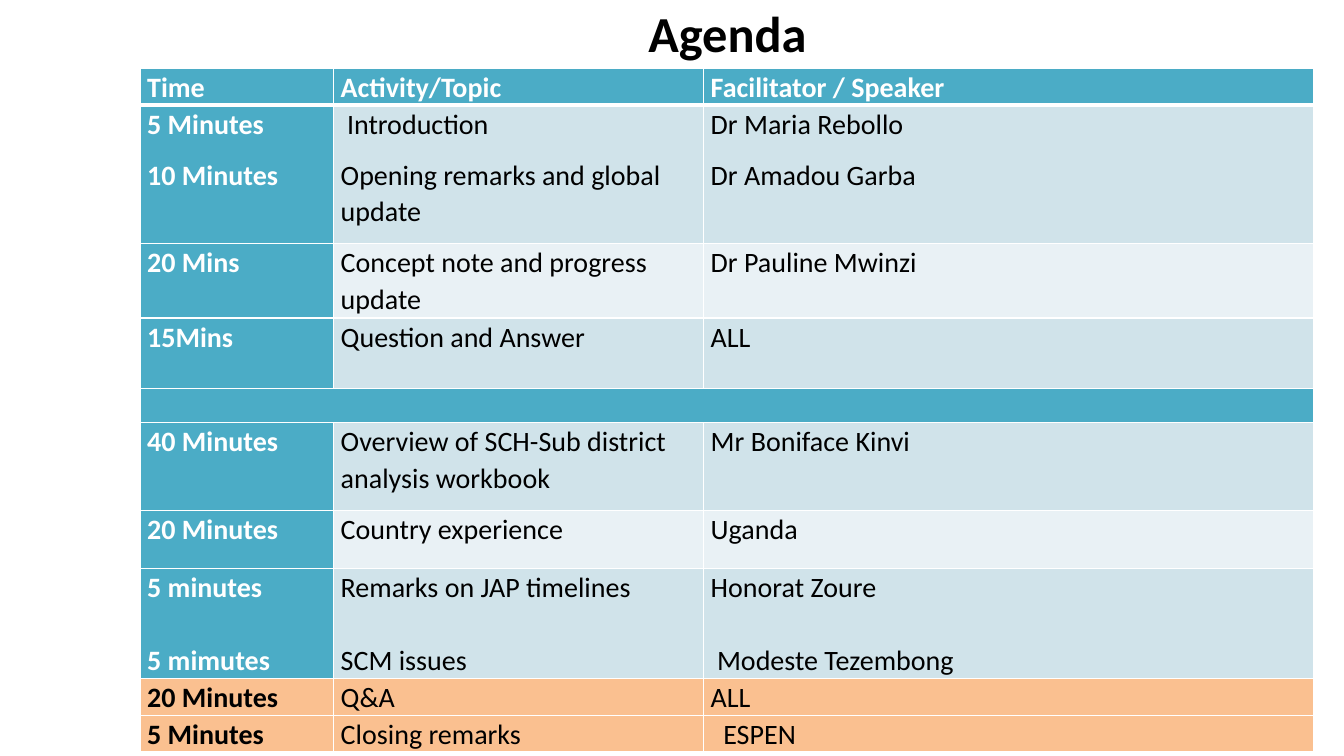
from dataclasses import dataclass

from lxml.etree import SubElement
from pptx import Presentation
from pptx.dml.color import RGBColor
from pptx.enum.text import MSO_ANCHOR, PP_ALIGN
from pptx.oxml.ns import qn
from pptx.slide import Slide
from pptx.table import _Cell
from pptx.util import Inches, Length, Pt

WHITE = RGBColor(0xFF, 0xFF, 0xFF)
BLACK = RGBColor(0x00, 0x00, 0x00)
TEAL = RGBColor(0x4B, 0xAC, 0xC6)
BLUE_BAND = RGBColor(0xD0, 0xE3, 0xEA)
PALE_BAND = RGBColor(0xE9, 0xF1, 0xF5)
ORANGE = RGBColor(0xFA, 0xC0, 0x90)

FONT = "Calibri"
SLIDE_WIDTH, SLIDE_HEIGHT = Inches(13.33), Inches(7.5)
TABLE_LEFT, TABLE_TOP = 10.43, 9.07
COLUMN_WIDTHS = (14.4, 27.53, 45.38)
INDENT_STEP = 4.5


def across(percent: float) -> Length:
    return Length(round(SLIDE_WIDTH * percent / 100))


def down(percent: float) -> Length:
    return Length(round(SLIDE_HEIGHT * percent / 100))


@dataclass(frozen=True)
class AgendaRow:
    """Cell texts, one line per paragraph, with height in percent of the slide."""

    height: float
    cells: tuple[str, ...]
    fill: RGBColor
    time_fill: RGBColor = TEAL
    time_color: RGBColor = WHITE
    gap: float = 10
    indents: tuple[int, ...] = (0, 0, 0)
    is_header: bool = False


AGENDA = (
    AgendaRow(4.8, ("Time", "Activity/Topic", "Facilitator / Speaker"), TEAL, is_header=True),
    AgendaRow(
        18.27,
        (
            "5 Minutes\n10 Minutes",
            "Introduction\nOpening remarks and global update",
            "Dr Maria Rebollo\nDr Amadou Garba",
        ),
        BLUE_BAND,
        indents=(0, 1, 0),
    ),
    AgendaRow(9.87, ("20 Mins", "Concept note and progress update", "Dr Pauline Mwinzi"), PALE_BAND),
    AgendaRow(9.33, ("15Mins", "Question and Answer", "ALL"), BLUE_BAND),
    AgendaRow(4.53, (), TEAL),
    AgendaRow(
        11.6,
        ("40 Minutes", "Overview of SCH-Sub district analysis workbook", "Mr Boniface Kinvi"),
        BLUE_BAND,
    ),
    AgendaRow(7.73, ("20 Minutes", "Country experience", "Uganda"), PALE_BAND),
    AgendaRow(
        14.53,
        (
            "5 minutes\n5 mimutes",
            "Remarks on JAP timelines\nSCM issues",
            "Honorat Zoure\nModeste Tezembong",
        ),
        BLUE_BAND,
        gap=26,
        indents=(0, 0, 1),
    ),
    AgendaRow(4.8, ("20 Minutes", "Q&A", "ALL"), ORANGE, ORANGE, BLACK),
    AgendaRow(4.8, ("5 Minutes", "Closing remarks", "ESPEN"), ORANGE, ORANGE, BLACK, indents=(0, 0, 2)),
)


def add_borders(cell: _Cell, top: float, bottom: float) -> None:
    properties = cell._tc.get_or_add_tcPr()
    for side, width in (("lnL", 1), ("lnR", 1), ("lnT", top), ("lnB", bottom)):
        line = SubElement(properties, qn(f"a:{side}"), w=str(Pt(width)))
        fill = SubElement(line, qn("a:solidFill"))
        SubElement(fill, qn("a:srgbClr"), val=str(WHITE))


def write_cell(cell: _Cell, text: str, color: RGBColor, bold: bool, gap: float, indent: int) -> None:
    """Write the text; the indent moves only the line that carries it."""
    cell.margin_left = cell.margin_right = Inches(0.07)
    cell.text_frame.text = text
    paragraphs = cell.text_frame.paragraphs
    indented = paragraphs[-1] if gap > 10 else paragraphs[0]
    if indent:
        indented._p.get_or_add_pPr().set("marL", str(Pt(INDENT_STEP * indent)))
    for paragraph in paragraphs:
        paragraph.line_spacing = 1.07
        paragraph.space_after = Pt(gap)
        for run in paragraph.runs:
            run.font.name = FONT
            run.font.size = Pt(20)
            run.font.bold = bold
            run.font.color.rgb = color


def add_title(slide: Slide) -> None:
    title = slide.shapes.title
    title.left, title.top = across(11.4), 0
    title.width, title.height = across(86.27), down(8.67)
    frame = title.text_frame
    frame.text = "Agenda"
    frame.vertical_anchor = MSO_ANCHOR.MIDDLE
    frame.margin_right = Inches(0.21)
    paragraph = frame.paragraphs[0]
    paragraph.alignment = PP_ALIGN.CENTER
    font = paragraph.runs[0].font
    font.name, font.size, font.bold = FONT, Pt(36), True
    font.color.rgb = BLACK


def add_agenda(slide: Slide) -> None:
    table = slide.shapes.add_table(
        len(AGENDA),
        len(COLUMN_WIDTHS),
        across(TABLE_LEFT),
        down(TABLE_TOP),
        across(sum(COLUMN_WIDTHS)),
        down(sum(row.height for row in AGENDA)),
    ).table
    table.horz_banding = False
    for column, width in zip(table.columns, COLUMN_WIDTHS):
        column.width = across(width)

    for row_index, row in enumerate(AGENDA):
        table.rows[row_index].height = down(row.height)
        for column_index in range(len(COLUMN_WIDTHS)):
            cell = table.cell(row_index, column_index)
            is_time = column_index == 0
            add_borders(cell, 3 if row_index == 1 else 1, 3 if row.is_header else 1)
            cell.fill.solid()
            cell.fill.fore_color.rgb = row.time_fill if is_time else row.fill
            cell.margin_top = cell.margin_bottom = 0
            if row.cells:
                write_cell(
                    cell,
                    row.cells[column_index],
                    row.time_color if is_time or row.is_header else BLACK,
                    is_time or row.is_header,
                    row.gap,
                    row.indents[column_index],
                )
        if not row.cells:
            table.cell(row_index, 0).merge(table.cell(row_index, len(COLUMN_WIDTHS) - 1))


def main() -> None:
    presentation = Presentation()
    presentation.slide_width, presentation.slide_height = SLIDE_WIDTH, SLIDE_HEIGHT
    slide = presentation.slides.add_slide(presentation.slide_layouts[5])
    add_title(slide)
    add_agenda(slide)
    presentation.save("out.pptx")


if __name__ == "__main__":
    main()
